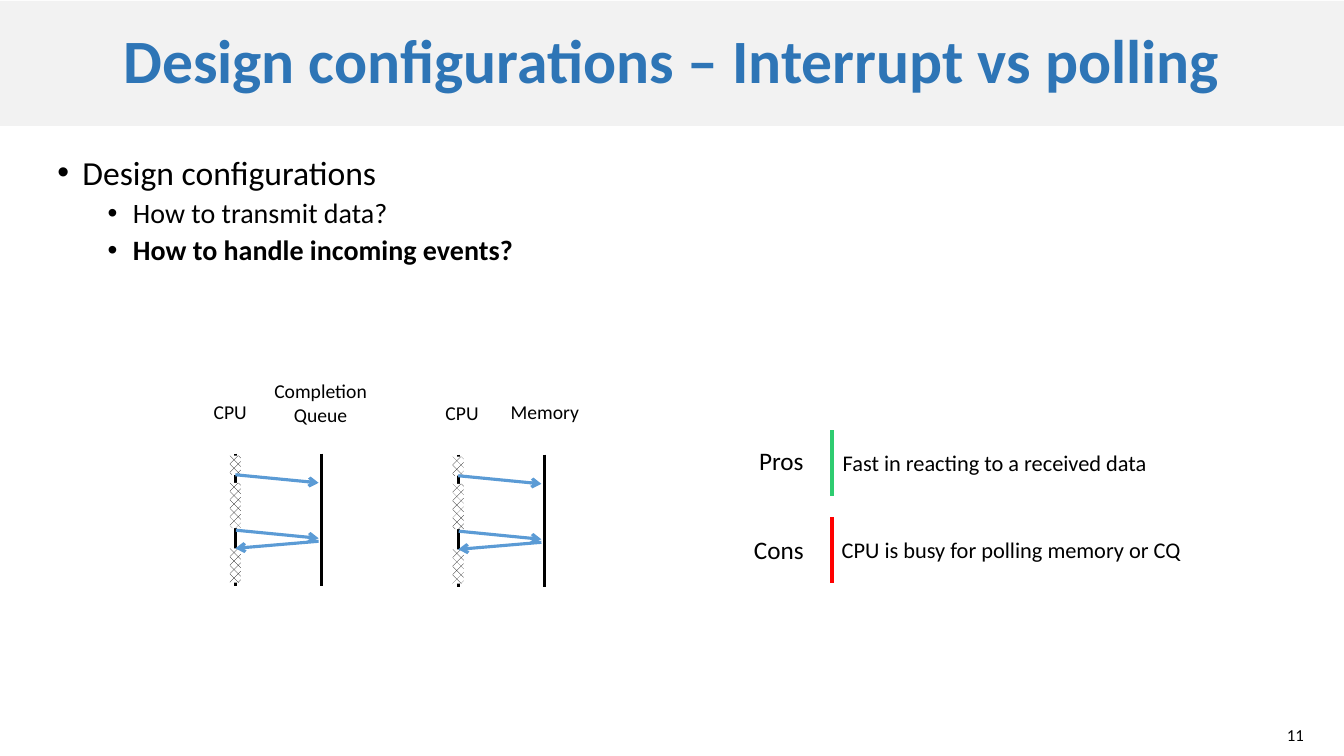
"""Build the slide that weighs polling for incoming events."""
from dataclasses import dataclass

from lxml.etree import SubElement
from pptx import Presentation
from pptx.dml.color import RGBColor
from pptx.enum.dml import MSO_PATTERN_TYPE as Pattern
from pptx.enum.shapes import MSO_CONNECTOR as Connector, MSO_SHAPE as Shape
from pptx.enum.text import MSO_ANCHOR as Anchor, PP_ALIGN as Align
from pptx.oxml.ns import qn
from pptx.util import Pt


@dataclass(frozen=True)
class Theme:
    font: str = "Calibri"
    black: str = "000000"
    white: str = "FFFFFF"
    band: str = "F2F2F2"
    title: str = "2E75B6"
    arrow: str = "5B9BD5"
    pros: str = "2ECC70"
    cons: str = "FF0000"
    title_size: int = 44
    topic_size: int = 24
    point_size: int = 20
    verdict_size: int = 18
    reason_size: int = 16
    label_size: int = 14
    number_size: int = 12


theme = Theme()
PX = 9144
color = RGBColor.from_string

deck = Presentation()
deck.slide_width, deck.slide_height = 1333 * PX, 750 * PX
page = deck.slides.add_slide(deck.slide_layouts[6])


def write(frame, text, size, ink=theme.black, bold=False, align=Align.LEFT,
          anchor=Anchor.TOP, wrap=True, spacing=None, before=0, indent=0):
    frame.word_wrap, frame.vertical_anchor = wrap, anchor
    para = frame.add_paragraph() if frame.text else frame.paragraphs[0]
    para.alignment, para.line_spacing, para.space_before = align, spacing, Pt(before)
    if indent:
        props = para._p.get_or_add_pPr()
        props.set("marL", str(indent * PX))
        props.set("indent", str(-25 * PX))
        SubElement(props, qn("a:buFont"), typeface="Arial")
        SubElement(props, qn("a:buChar"), char="•")
    span = para.add_run()
    span.text = text
    span.font.name, span.font.size, span.font.bold = theme.font, Pt(size), bold
    span.font.color.rgb = color(ink)


def draw_line(start, end, ink, width, arrow=False):
    line = page.shapes.add_connector(
        Connector.STRAIGHT, *(n * PX for n in (*start, *end)))
    line.line.color.rgb, line.line.width = color(ink), Pt(width)
    if arrow:
        SubElement(line.line._get_or_add_ln(), qn("a:tailEnd"), type="arrow")
    SubElement(line._element.spPr, qn("a:effectLst"))
    return line


band = page.shapes.add_shape(Shape.RECTANGLE, 0, PX, 1333 * PX, 124 * PX)
band.shadow.inherit = False
band.fill.solid()
band.fill.fore_color.rgb = color(theme.band)
band.line.fill.background()
write(band.text_frame, "Design configurations – Interrupt vs polling", theme.title_size,
      ink=theme.title, bold=True, align=Align.CENTER, anchor=Anchor.MIDDLE, spacing=0.9)

body = page.shapes.add_textbox(47 * PX, 150 * PX, 1236 * PX, 483 * PX).text_frame
write(body, "Design configurations", theme.topic_size, spacing=0.9, before=12, indent=25)
for point, bold in (("How to transmit data?", False), ("How to handle incoming events?", True)):
    write(body, point, theme.point_size, bold=bold, spacing=0.9, before=5, indent=75)

for left, top in ((234, 450), (455, 451)):
    for x in (left, left + 85):
        draw_line((x, top), (x, top + 131), theme.black, 2.25)
    busy = []
    for offset, height in ((2, 19), (29, 45), (94, 34)):
        box = page.shapes.add_shape(Shape.RECTANGLE, (left - 6) * PX, (top + offset) * PX,
                                    11 * PX, height * PX)
        box.shadow.inherit = False
        box.fill.patterned()
        box.fill.pattern = Pattern.from_xml("pct40")
        box.fill.fore_color.rgb = color(theme.black)
        box.fill.back_color.rgb = color(theme.white)
        box.line.fill.background()
        busy.append(box)
    far = left + 82
    poll = draw_line((left, top + 21), (far, top + 29), theme.arrow, 2.25, arrow=True)
    poll.begin_connect(busy[0], 2)
    draw_line((left, top + 76), (far, top + 84), theme.arrow, 2.25, arrow=True)
    reply = draw_line((far, top + 87), (left, top + 94), theme.arrow, 2.25, arrow=True)
    reply.end_connect(busy[2], 0)

for top, ink in ((427, theme.pros), (513, theme.cons)):
    draw_line((825, top), (825, top + 65), ink, 3)

for text, left, top, width, height, size, style in (
    ("CPU", 202, 392, 66, 55, theme.label_size, {}),
    ("Completion Queue", 250, 371, 136, 93, theme.label_size, {"align": Align.CENTER}),
    ("CPU", 432, 393, 63, 55, theme.label_size, {}),
    ("Memory", 482, 392, 117, 55, theme.label_size, {"align": Align.CENTER}),
    ("Pros", 743, 437, 65, 40, theme.verdict_size, {"wrap": False}),
    ("Cons", 738, 525, 70, 40, theme.verdict_size, {"wrap": False}),
    ("Fast in reacting to a received data", 826, 441, 340, 37, theme.reason_size, {}),
    ("CPU is busy for polling memory or CQ", 825, 527, 358, 37, theme.reason_size,
     {"wrap": False}),
    ("11", 1196, 714, 107, 30, theme.number_size,
     {"align": Align.RIGHT, "anchor": Anchor.MIDDLE}),
):
    label = page.shapes.add_textbox(left * PX, top * PX, width * PX, height * PX)
    write(label.text_frame, text, size, **style)

deck.save("out.pptx")
